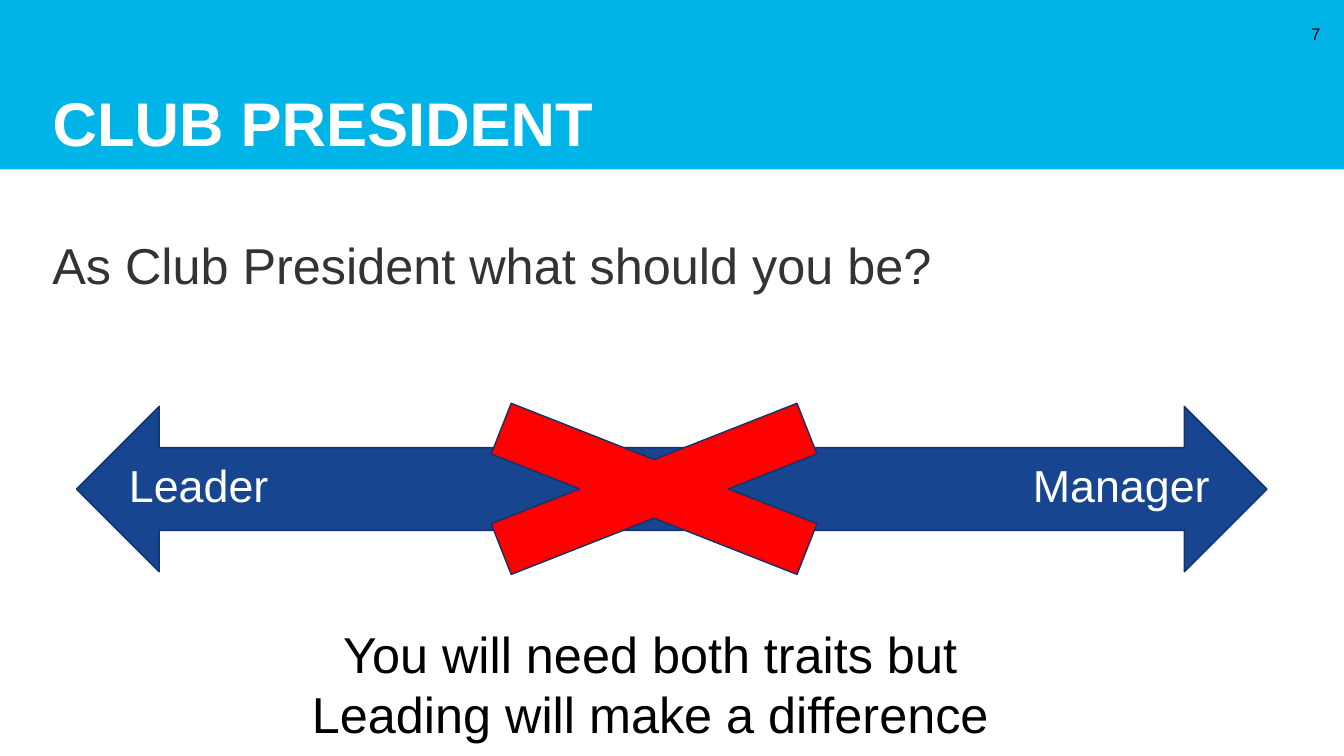
"""Build the club president slide, contrasting leader and manager."""
from dataclasses import dataclass, field
from typing import Any

import pptx
import pptx.dml.color
import pptx.enum.shapes
import pptx.enum.text
import pptx.util

Cm = pptx.util.Cm
Pt = pptx.util.Pt
Align = pptx.enum.text.PP_ALIGN
Anchor = pptx.enum.text.MSO_ANCHOR
Fit = pptx.enum.text.MSO_AUTO_SIZE
Preset = pptx.enum.shapes.MSO_SHAPE


@dataclass(frozen=True)
class Theme:
    font: str = "Arial"
    sky: str = "01B4E7"
    navy: str = "17458F"
    outline: str = "11336A"
    red: str = "FF0000"
    white: str = "FFFFFF"
    gray: str = "333333"
    black: str = "000000"
    title_size: int = 44
    body_size: int = 36
    label_size: int = 32
    number_size: int = 12


@dataclass(frozen=True)
class Area:
    left: float
    top: float
    width: float
    height: float

    def lengths(self) -> tuple:
        return Cm(self.left), Cm(self.top), Cm(self.width), Cm(self.height)


@dataclass(frozen=True)
class Figure:
    preset: Any
    area: Area
    fill: str
    outline: str | None = None


@dataclass(frozen=True)
class Caption:
    lines: tuple[str, ...]
    area: Area
    size: int
    color: str
    bold: bool = False
    frame_format: dict[str, Any] = field(default_factory=dict)
    para_format: dict[str, Any] = field(default_factory=dict)


THEME = Theme()
WIDTH, HEIGHT = 33.87, 19.05
BAND_HEIGHT = 4.27
MARGIN, TEXT_WIDTH = 1.07, 31.95
LABEL_TOP, LABEL_HEIGHT = 11.4, 1.63
LABEL_FORMAT = {"word_wrap": False, "auto_size": Fit.SHAPE_TO_FIT_TEXT}

BAND = Figure(Preset.RECTANGLE, Area(0, 0, WIDTH, BAND_HEIGHT), THEME.sky)
ARROW = Figure(Preset.LEFT_RIGHT_ARROW, Area(1.93, 10.24, 30, 4.17), THEME.navy, THEME.outline)
CROSS = Figure(Preset.MATH_MULTIPLY, Area(9.07, 9.4, 14.83, 5.84), THEME.red, THEME.outline)

TITLE = Caption(
    ("CLUB PRESIDENT",), Area(MARGIN, 0, TEXT_WIDTH, BAND_HEIGHT),
    THEME.title_size, THEME.white, True,
    {"vertical_anchor": Anchor.BOTTOM, "margin_top": 0, "margin_bottom": Cm(0.25)},
    {"line_spacing": 0.9, "alignment": Align.LEFT},
)
CAPTIONS = (
    Caption(("As Club President what should you be?",), Area(MARGIN, 5.94, TEXT_WIDTH, 11.2),
            THEME.body_size, THEME.gray,
            para_format={"line_spacing": 0.9, "space_before": Pt(10)}),
    Caption(("7",), Area(32.36, 0.33, 1.17, 1.02), THEME.number_size, THEME.black,
            frame_format={"vertical_anchor": Anchor.MIDDLE},
            para_format={"alignment": Align.RIGHT}),
    Caption(("Leader",), Area(3, LABEL_TOP, 4.06, LABEL_HEIGHT),
            THEME.label_size, THEME.white, frame_format=LABEL_FORMAT),
    Caption(("Manager",), Area(25.78, LABEL_TOP, 5, LABEL_HEIGHT),
            THEME.label_size, THEME.white, frame_format=LABEL_FORMAT),
    Caption(("You will need both traits but", "Leading will make a difference"),
            Area(5.66, 15.57, 21.46, 3.33), THEME.body_size, THEME.black,
            frame_format={"auto_size": Fit.SHAPE_TO_FIT_TEXT},
            para_format={"alignment": Align.CENTER}),
)


def rgb(code: str) -> pptx.dml.color.RGBColor:
    return pptx.dml.color.RGBColor.from_string(code)


def apply(target: Any, values: dict[str, Any]) -> None:
    for name, value in values.items():
        setattr(target, name, value)


def draw_figure(page: Any, figure: Figure) -> Any:
    shape = page.shapes.add_shape(figure.preset, *figure.area.lengths())
    shape.shadow.inherit = False
    shape.fill.solid()
    shape.fill.fore_color.rgb = rgb(figure.fill)
    if figure.outline:
        shape.line.color.rgb = rgb(figure.outline)
        shape.line.width = Pt(1)
    else:
        shape.line.fill.background()
    return shape


def write_caption(box: Any, caption: Caption) -> None:
    apply(box, dict(zip(("left", "top", "width", "height"), caption.area.lengths())))
    frame = box.text_frame
    apply(frame, {"word_wrap": True, "auto_size": Fit.NONE} | caption.frame_format)
    for index, line in enumerate(caption.lines):
        para = frame.add_paragraph() if index else frame.paragraphs[0]
        apply(para, caption.para_format)
        span = para.add_run()
        span.text = line
        apply(span.font, {"name": THEME.font, "size": Pt(caption.size), "bold": caption.bold})
        span.font.color.rgb = rgb(caption.color)


def main() -> None:
    deck = pptx.Presentation()
    apply(deck, {"slide_width": Cm(WIDTH), "slide_height": Cm(HEIGHT)})
    page = deck.slides.add_slide(deck.slide_layouts.get_by_name("Title Only"))
    band = draw_figure(page, BAND)
    title = page.shapes.title
    band.element.addnext(title.element)
    write_caption(title, TITLE)
    draw_figure(page, ARROW)
    for caption in CAPTIONS:
        write_caption(page.shapes.add_textbox(*caption.area.lengths()), caption)
    draw_figure(page, CROSS)
    deck.save("out.pptx")


if __name__ == "__main__":
    main()
